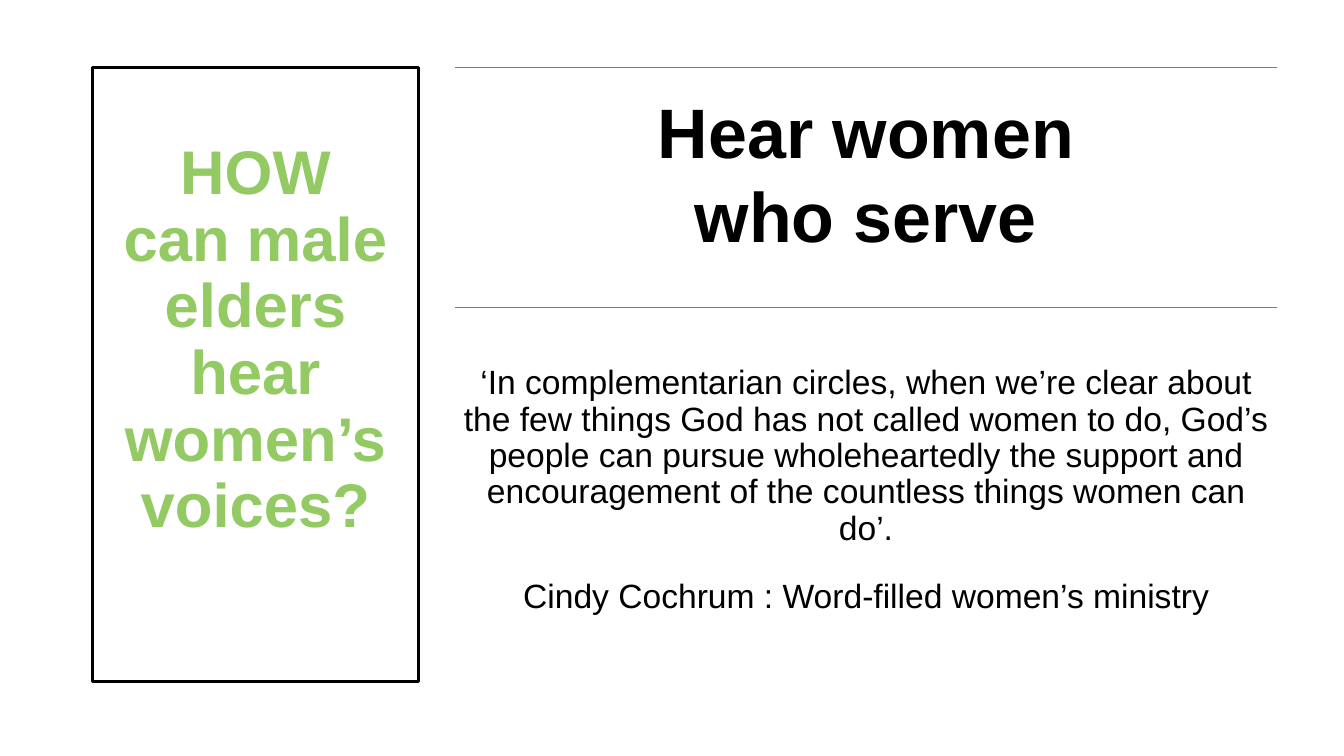
from pptx import Presentation
from pptx import util as u
from pptx.dml.color import RGBColor
from pptx.enum import shapes, text
from pptx.oxml.ns import qn
from lxml import etree

FONT = "Arial"
BLACK, LEAF, RULE = "000000", "94CA63", "1FBC14"
TOP = 1.7                    # shared top edge of panel and heading, in cm
COLUMN, WIDTH = 11.46, 20.73  # right-hand column, in cm


def paint(target, colour):
    target.rgb = RGBColor.from_string(colour)


def place(box, left, top, width, height):
    box.left, box.top = u.Cm(left), u.Cm(top)
    box.width, box.height = u.Cm(width), u.Cm(height)


def set_frame(box, side, top, bottom, anchor):
    frame = box.text_frame
    frame.word_wrap = True
    frame.auto_size = text.MSO_AUTO_SIZE.NONE
    frame.vertical_anchor = anchor
    frame.margin_left = frame.margin_right = u.Cm(side)
    frame.margin_top, frame.margin_bottom = u.Cm(top), u.Cm(bottom)


def add_span(para, words, size, colour, bold):
    span = para.add_run()
    span.text = words
    span.font.name, span.font.size, span.font.bold = FONT, u.Pt(size), bold
    paint(span.font.color, colour)


def write_paras(box, lines, size, colour=BLACK, bold=False, spacing=1.0, after=0):
    """Write centred paragraphs without bullets or indents."""
    frame = box.text_frame
    for index, words in enumerate(lines):
        para = frame.add_paragraph() if index else frame.paragraphs[0]
        para.alignment = text.PP_ALIGN.CENTER
        para.line_spacing = spacing
        para.space_before, para.space_after = u.Pt(0), u.Pt(after)
        props = para._p.get_or_add_pPr()
        props.set("marL", "0")
        props.set("indent", "0")
        etree.SubElement(props, qn("a:buNone"))
        add_span(para, words, size, colour, bold)


def add_rule(page, top):
    rule = page.shapes.add_connector(
        shapes.MSO_CONNECTOR.STRAIGHT,
        u.Cm(COLUMN), u.Cm(top), u.Cm(COLUMN + WIDTH), u.Cm(top))
    paint(rule.line.color, RULE)
    rule.line.width = u.Pt(1)
    etree.SubElement(rule._element.spPr, qn("a:effectLst"))


def fill_question(box):
    place(box, 2.34, TOP, 8.2, 15.47)
    paint(box.line.color, BLACK)
    box.line.width = u.Pt(2.25)
    # Deep bottom inset lifts the question above the middle
    set_frame(box, 0.25, 0.13, 1.8, text.MSO_ANCHOR.MIDDLE)
    para = box.text_frame.paragraphs[0]
    para.alignment = text.PP_ALIGN.CENTER
    para.line_spacing = 0.9
    add_span(para, "HOW", 44, LEAF, True)
    para.add_line_break()
    add_span(para, "can male elders hear women’s voices?", 44, LEAF, True)


def add_heading(page):
    box = page.shapes.add_textbox(0, 0, 0, 0)
    place(box, COLUMN, TOP, WIDTH, 7.72)
    set_frame(box, 0.53, 0.53, 0.53, text.MSO_ANCHOR.TOP)
    write_paras(box, ["Hear women", "who serve"], 50, bold=True)


def fill_quote(box):
    place(box, COLUMN, 8.53, WIDTH, 7.72)
    set_frame(box, 0.1, 0.69, 0.1, text.MSO_ANCHOR.TOP)
    write_paras(box, [
        "‘In complementarian circles, when we’re clear about the few things "
        "God has not called women to do, God’s people can pursue "
        "wholeheartedly the support and encouragement of the countless "
        "things women can do’.",
        "Cindy Cochrum : Word-filled women’s ministry",
    ], 24, spacing=0.9, after=22.8)


def main():
    deck = Presentation()
    deck.slide_width, deck.slide_height = u.Cm(33.87), u.Cm(19.05)
    page = deck.slides.add_slide(deck.slide_layouts[1])
    page.background.fill.solid()
    paint(page.background.fill.fore_color, "FFFFFF")

    # Question panel on the left
    fill_question(page.shapes.title)

    # Heading between two rules
    for top in (TOP, 7.75):
        add_rule(page, top)
    add_heading(page)

    # Quotation and its source
    fill_quote(page.placeholders[1])

    deck.save("out.pptx")


if __name__ == "__main__":
    main()
